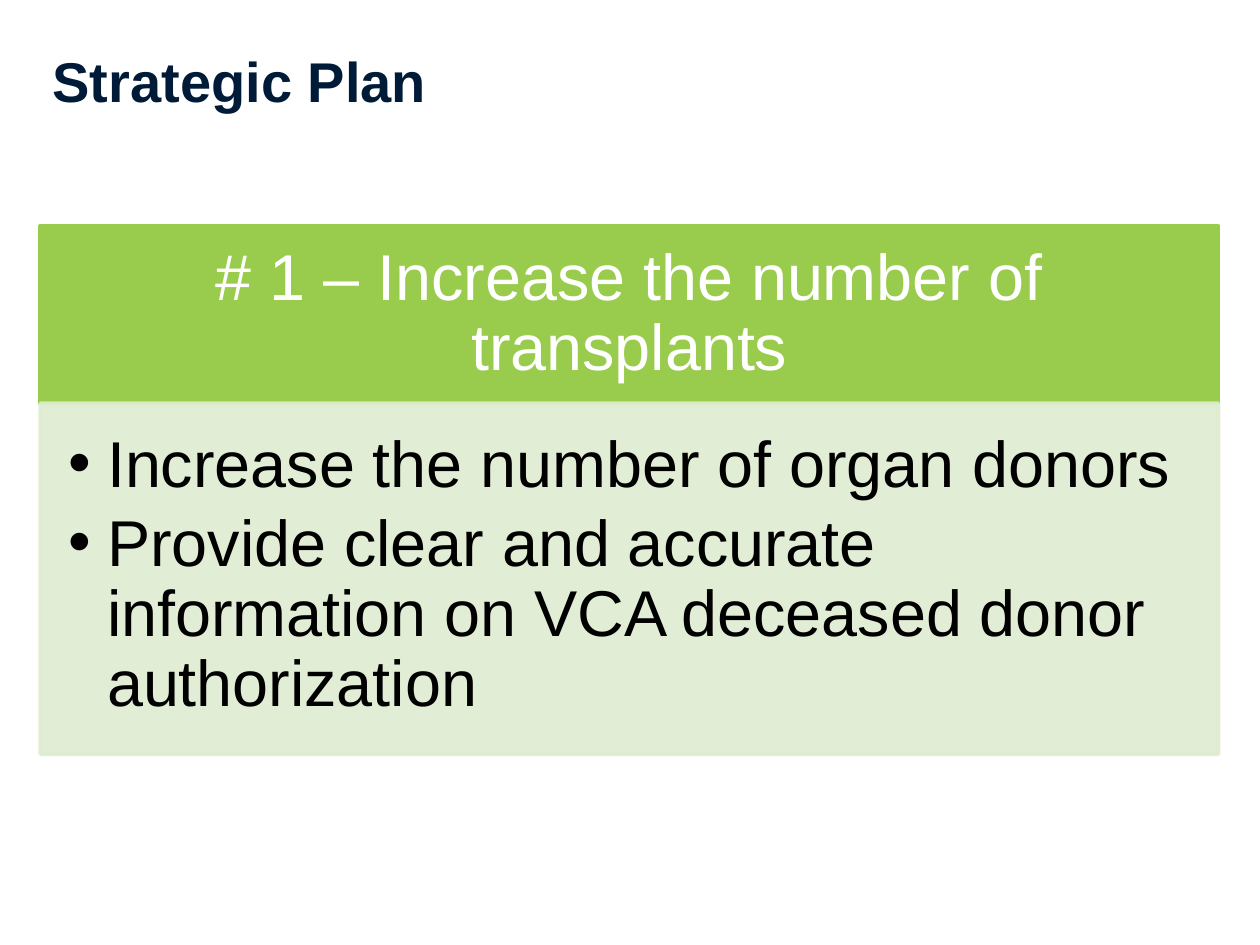
import pptx
import pptx.util
import pptx.dml.color
import pptx.enum.shapes
import pptx.enum.text
import pptx.oxml.ns
from lxml import etree

COLORS = {"green": "99CC4C", "pale": "DEECD0", "navy": "001B37",
          "white": "FFFFFF", "black": "000000"}
FONT = "Arial"
ALIGN = pptx.enum.text.PP_ALIGN
ANCHOR = pptx.enum.text.MSO_ANCHOR
Inches, Pt = pptx.util.Inches, pptx.util.Pt
qn = pptx.oxml.ns.qn

W, H = Inches(10), Inches(7.5)


def share(x, y, w, h):
    """Turn shares of the slide's size into a box."""
    return round(W * x), round(H * y), round(W * w), round(H * h)


def rgb(name):
    return pptx.dml.color.RGBColor.from_string(COLORS[name])


def add_bullet(p, indent):
    pPr = p._p.get_or_add_pPr()
    pPr.set("marL", str(Inches(indent)))
    pPr.set("indent", str(-Inches(indent)))
    etree.SubElement(pPr, qn("a:buFont")).set("typeface", FONT)
    etree.SubElement(pPr, qn("a:buChar")).set("char", "•")


def write(tf, text, size=37, color="black", bold=False, align=ALIGN.LEFT,
          anchor=ANCHOR.TOP, insets=(0.1, 0.05, 0.1, 0.05), spacing=None,
          after=0, bullet=None):
    """Write each line of text as one paragraph."""
    tf.word_wrap = True
    tf.vertical_anchor = anchor
    tf.margin_left, tf.margin_top, tf.margin_right, tf.margin_bottom = map(Inches, insets)
    for i, line in enumerate(text.split("\n")):
        p = tf.paragraphs[0] if i == 0 else tf.add_paragraph()
        p.alignment = align
        p.space_after = Pt(after)
        if spacing:
            p.line_spacing = spacing
        if bullet:
            add_bullet(p, bullet)
        r = p.add_run()
        r.text = line
        r.font.name, r.font.size, r.font.bold = FONT, Pt(size), bold
        r.font.color.rgb = rgb(color)


def add_panel(slide, box, color, opacity=100):
    s = slide.shapes.add_shape(pptx.enum.shapes.MSO_SHAPE.RECTANGLE, *box)
    s.shadow.inherit = False
    s.fill.solid()
    s.fill.fore_color.rgb = rgb(color)
    s.line.color.rgb = rgb(color)
    s.line.width = Pt(2.25)
    if opacity < 100:
        for clr in s._element.spPr.iter(qn("a:srgbClr")):
            etree.SubElement(clr, qn("a:alpha")).set("val", str(opacity * 1000))
    return s


def add_title(slide, box, text):
    s = slide.shapes.add_textbox(*box)
    write(s.text_frame, text, size=32, color="navy", bold=True, anchor=ANCHOR.MIDDLE)


def add_goal(slide, box, heading, points):
    """Heading band over the list of points, one third to two thirds."""
    x, y, w, h = box
    band = round(h * 0.336)

    # Heading band
    s = add_panel(slide, (x, y, w, band), "green")
    write(s.text_frame, heading, color="white", align=ALIGN.CENTER,
          anchor=ANCHOR.MIDDLE, insets=(0.29, 0.16, 0.29, 0.16), spacing=0.9)

    # Points
    s = add_panel(slide, (x, y + band, w, h - band), "pale", opacity=90)
    write(s.text_frame, "\n".join(points), insets=(0.22, 0.22, 0.29, 0.32),
          spacing=0.9, after=5.5, bullet=0.31)


def main():
    prs = pptx.Presentation()
    prs.slide_width, prs.slide_height = W, H
    slide = prs.slides.add_slide(prs.slide_layouts[6])

    add_goal(slide, share(0.032, 0.239, 0.935, 0.559),
             "# 1 – Increase the number of transplants",
             ["Increase the number of organ donors",
              "Provide clear and accurate information on VCA deceased donor authorization"])
    add_title(slide, share(0.032, 0.023, 0.956, 0.124), "Strategic Plan")

    prs.save("out.pptx")


if __name__ == "__main__":
    main()
